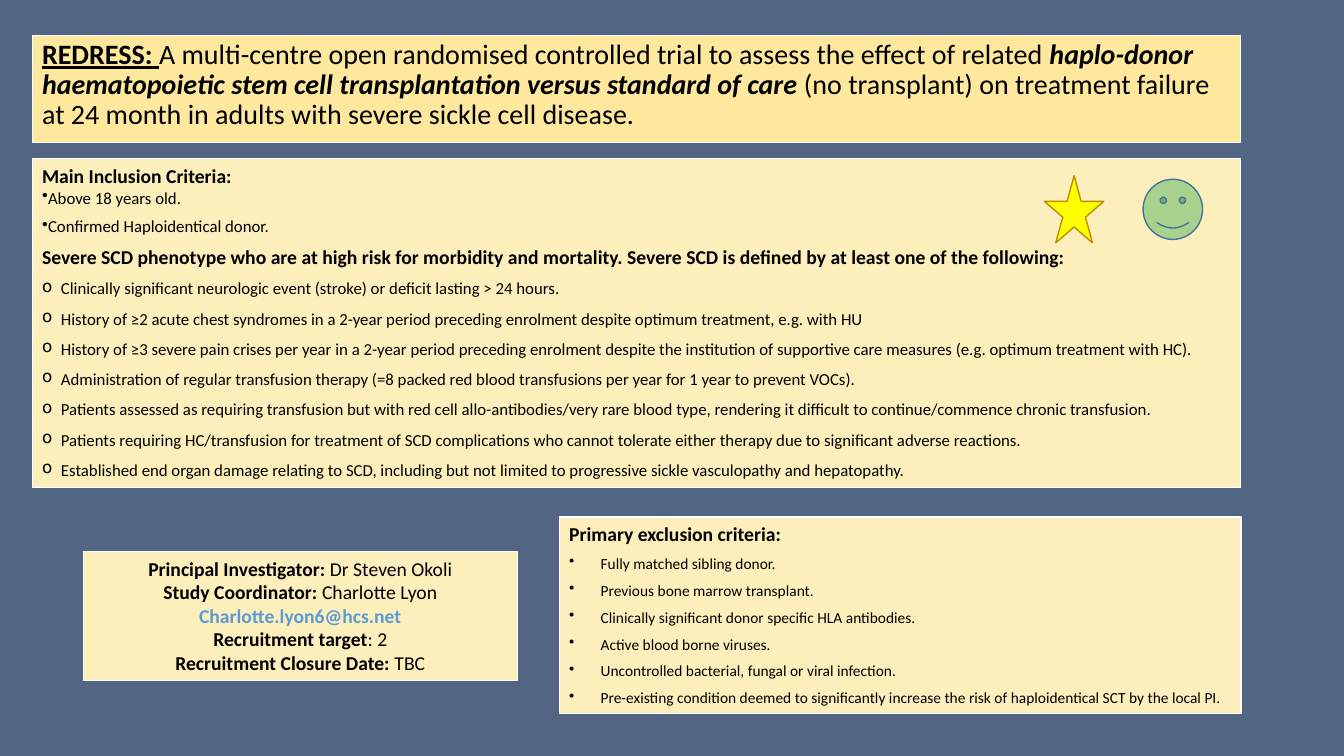
import dataclasses

import lxml.etree
import pptx
import pptx.dml.color
import pptx.enum.shapes
import pptx.enum.text
import pptx.oxml.ns
import pptx.util

Pt = pptx.util.Pt
SHAPE = pptx.enum.shapes.MSO_SHAPE
ALIGN = pptx.enum.text.PP_ALIGN


@dataclasses.dataclass(frozen=True)
class Theme:
    font: str = "Calibri"
    background: str = "526582"
    title_fill: str = "FDE89D"
    panel_fill: str = "FDEFBB"
    panel_line: str = "FFFFFF"
    text: str = "000000"
    email: str = "5B9BD5"
    smiley_fill: str = "A9D18E"
    smiley_line: str = "43739E"
    star_fill: str = "FFFF00"
    star_line: str = "BD8E00"
    title_size: float = 20
    heading_size: float = 14
    body_size: float = 12
    small_size: float = 11


def rgb(value):
    return pptx.dml.color.RGBColor.from_string(value)


def add_span(para, text, *, font, size, color, bold=False, italic=False, underline=False):
    """Append one formatted run to a paragraph."""
    span = para.add_run()
    span.text = text
    span.font.name = font
    span.font.size = Pt(size)
    span.font.color.rgb = rgb(color)
    span.font.bold = bold
    span.font.italic = italic
    span.font.underline = underline


class PageBuilder:
    def __init__(self, page, theme):
        self.page = page
        self.theme = theme
        page.background.fill.solid()
        page.background.fill.fore_color.rgb = rgb(theme.background)

    def shape(self, kind, left, top, width, height, fill, line, line_width=1):
        shape = self.page.shapes.add_shape(kind, Pt(left), Pt(top), Pt(width), Pt(height))
        shape.shadow.inherit = False
        shape.fill.solid()
        shape.fill.fore_color.rgb = rgb(fill)
        shape.line.color.rgb = rgb(line)
        shape.line.width = Pt(line_width)
        return shape

    def panel(self, left, top, width, height, fill=None, line_width=0.75, grow=True):
        box = self.shape(SHAPE.RECTANGLE, left, top, width, height,
                         fill or self.theme.panel_fill, self.theme.panel_line, line_width)
        frame = box.text_frame
        frame.word_wrap = True
        frame.vertical_anchor = pptx.enum.text.MSO_ANCHOR.TOP
        if grow:
            frame.auto_size = pptx.enum.text.MSO_AUTO_SIZE.SHAPE_TO_FIT_TEXT
        return frame

    def paragraph(self, frame, spans, size, align=ALIGN.LEFT, line_spacing=1, after=0):
        """Add a paragraph from (text, format) pairs, reusing the empty first one."""
        first = frame.paragraphs[0]
        para = frame.add_paragraph() if first.runs else first
        para.alignment = align
        para.line_spacing = line_spacing
        para.space_after = Pt(after)
        for text, style in spans:
            base = {"font": self.theme.font, "size": size, "color": self.theme.text}
            add_span(para, text, **(base | style))
        return para

    def heading(self, frame, text, after=0):
        self.paragraph(frame, [(text, {"bold": True})], self.theme.heading_size, after=after)

    def bullets(self, frame, items, size, mark, margin, hanging, **spacing):
        for item in items:
            para = self.paragraph(frame, [(item, {})], size, **spacing)
            properties = para._p.get_or_add_pPr()
            properties.set("marL", str(int(Pt(margin))))
            properties.set("indent", str(-int(Pt(hanging))))
            bullet = lxml.etree.SubElement(properties, pptx.oxml.ns.qn("a:buChar"))
            bullet.set("char", mark)


BASIC_CRITERIA = ["Above 18 years old.", "Confirmed Haploidentical donor."]
SEVERE_CRITERIA = [
    "Clinically significant neurologic event (stroke) or deficit lasting > 24 hours.",
    "History of ≥2 acute chest syndromes in a 2-year period preceding enrolment despite "
    "optimum treatment, e.g. with HU",
    "History of ≥3 severe pain crises per year in a 2-year period preceding enrolment despite "
    "the institution of supportive care measures (e.g. optimum treatment with HC).",
    "Administration of regular transfusion therapy (=8 packed red blood transfusions per year "
    "for 1 year to prevent VOCs).",
    "Patients assessed as requiring transfusion but with red cell allo-antibodies/very rare "
    "blood type, rendering it difficult to continue/commence chronic transfusion.",
    "Patients requiring HC/transfusion for treatment of SCD complications who cannot tolerate "
    "either therapy due to significant adverse reactions.",
    "Established end organ damage relating to SCD, including but not limited to progressive "
    "sickle vasculopathy and hepatopathy.",
]
EXCLUSION_CRITERIA = [
    "Fully matched sibling donor.",
    "Previous bone marrow transplant.",
    "Clinically significant donor specific HLA antibodies.",
    "Active blood borne viruses.",
    "Uncontrolled bacterial, fungal or viral infection.",
    "Pre-existing condition deemed to significantly increase the risk of haploidentical SCT "
    "by the local PI.",
]


def main():
    theme = Theme()
    deck = pptx.Presentation()
    deck.slide_width, deck.slide_height = Pt(960), Pt(540)
    builder = PageBuilder(deck.slides.add_slide(deck.slide_layouts[6]), theme)
    bold = {"bold": True}

    # Study contacts
    contacts = builder.panel(59.5, 394, 310, 92)
    for spans in [
        [("Principal Investigator: ", bold), ("Dr Steven Okoli", {})],
        [("Study Coordinator: ", bold), ("Charlotte Lyon", {})],
        [("Charlotte.lyon6@hcs.net", {"bold": True, "color": theme.email})],
        [("Recruitment target", bold), (": 2", {})],
        [("Recruitment Closure Date: ", bold), ("TBC", {})],
    ]:
        builder.paragraph(contacts, spans, theme.heading_size, align=ALIGN.CENTER)

    # Study title
    title = builder.panel(23, 25.2, 863.5, 76.5, fill=theme.title_fill, grow=False)
    builder.paragraph(title, [
        ("REDRESS: ", {"bold": True, "underline": True}),
        ("A multi-centre open randomised controlled trial to assess the effect of related ", {}),
        ("haplo-donor haematopoietic stem cell transplantation versus standard of care ",
         {"bold": True, "italic": True}),
        ("(no transplant) on treatment failure at 24 month in adults with severe sickle cell "
         "disease.", {}),
    ], theme.title_size, line_spacing=0.9)

    # Inclusion criteria
    inclusion = builder.panel(23, 113.5, 863.5, 235)
    builder.heading(inclusion, "Main Inclusion Criteria:")
    builder.bullets(inclusion, BASIC_CRITERIA, theme.body_size, "•", 0, 22.5, after=6)
    builder.heading(inclusion, "Severe SCD phenotype who are at high risk for morbidity and "
                    "mortality. Severe SCD is defined by at least one of the following:")
    builder.bullets(inclusion, SEVERE_CRITERIA, theme.body_size, "o", 13.5, 13.5,
                    line_spacing=1.5)

    # Exclusion criteria
    exclusion = builder.panel(399.5, 369.3, 487, 140.5, line_width=1)
    builder.heading(exclusion, "Primary exclusion criteria:", after=6)
    builder.bullets(exclusion, EXCLUSION_CRITERIA, theme.small_size, "•", 22.5, 22.5, after=6)

    # Markers
    builder.shape(SHAPE.SMILEY_FACE, 816.5, 128, 42.5, 43, theme.smiley_fill, theme.smiley_line)
    builder.shape(SHAPE.STAR_5_POINT, 746, 125.5, 42.5, 48, theme.star_fill, theme.star_line)

    deck.save("out.pptx")


if __name__ == "__main__":
    main()
